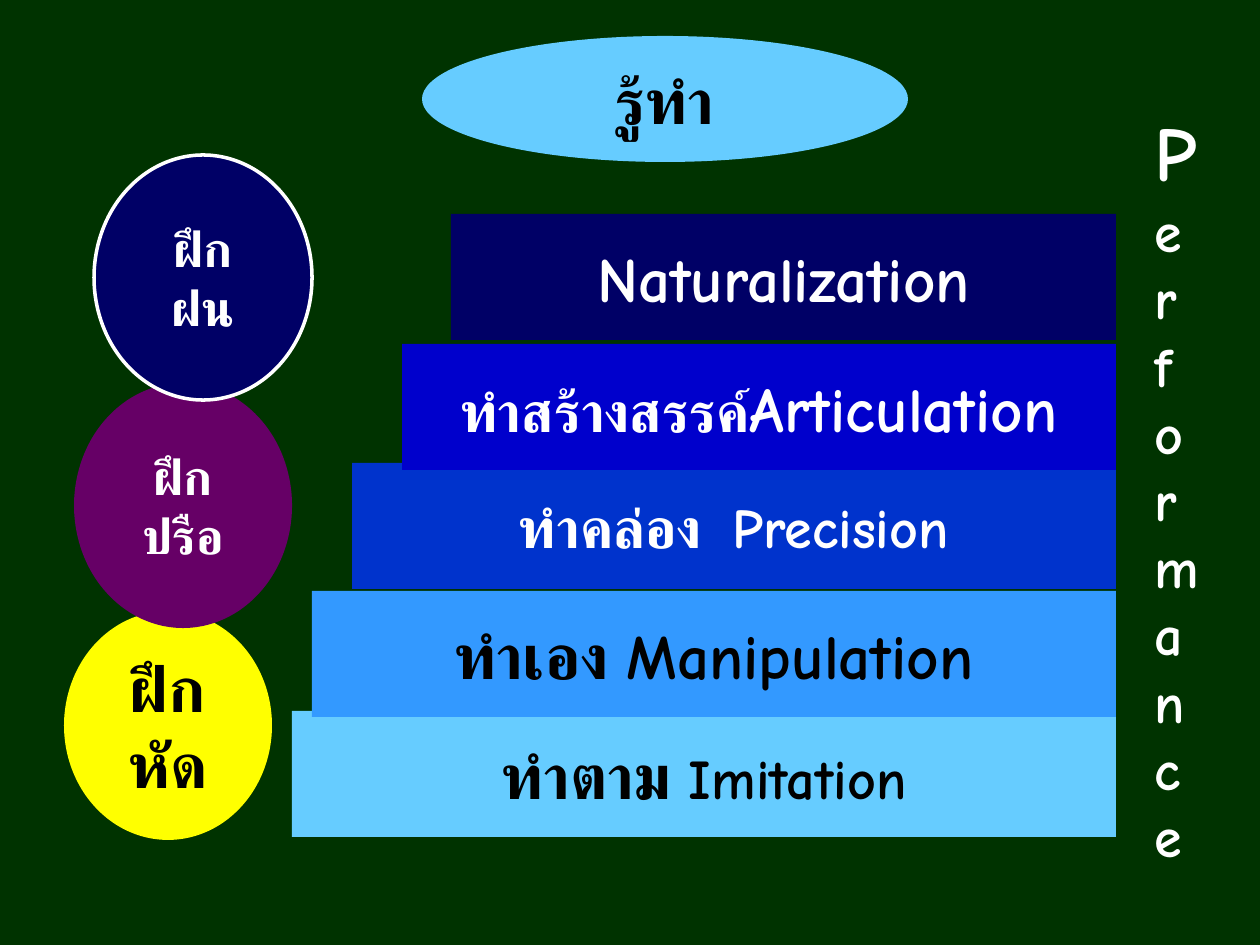
from pptx import Presentation
from pptx.dml.color import RGBColor
from pptx.enum.shapes import MSO_SHAPE as Kind
from pptx.enum.text import MSO_ANCHOR as Anchor, MSO_AUTO_SIZE as Fit, PP_ALIGN as Align
from pptx.util import Emu, Pt

PX = 914400 / 126
HEX = {
    "back": "003300", "sky": "66CCFF", "azure": "3399FF", "blue": "0033CC",
    "royal": "0000CC", "navy": "000066", "plum": "660066", "yellow": "FFFF00",
    "black": "000000", "white": "FFFFFF",
}
COMIC, LATO = "Comic Neue", "Lato"


def color(name):
    return RGBColor.from_string(HEX[name])


def place(box):
    return [Emu(round(n * PX)) for n in box]


def style(run, size, face, ink):
    font = run.font
    font.size, font.name, font.bold = Pt(size), face, True
    font.color.rgb = color(ink)


def add_form(slide, kind, box, fill, ink, lines, edge=None):
    """Each line is a list of (text, size, face) runs."""
    form = slide.shapes.add_shape(kind, *place(box))
    form.shadow.inherit = False
    form.fill.solid()
    form.fill.fore_color.rgb = color(fill)
    if edge:
        form.line.color.rgb = color(edge)
        form.line.width = Pt(2)
    else:
        form.line.fill.background()
    frame = form.text_frame
    frame.vertical_anchor = Anchor.MIDDLE
    frame.word_wrap = True
    frame.text = "\n".join("" for _ in lines)
    for para, line in zip(frame.paragraphs, lines):
        para.alignment = Align.CENTER
        for text, size, face in line:
            run = para.add_run()
            run.text = text
            style(run, size, face, ink)


def add_steps(slide, box):
    """Stack bars from the bottom up, all flush with the right edge of the box."""
    left, top, wide, _ = box
    steps = [
        (0, 497, "sky", "black", [("ทำตาม ", 36, COMIC), ("Imitation", 32, COMIC)]),
        (20, 377, "azure", "black", [("ทำเอง Manipulation", 36, COMIC)]),
        (60, 249, "blue", "white", [("ทำคล่อง  Precision", 32, COMIC)]),
        (110, 130, "royal", "white",
         [("ทำสร้างสรรค์", 32, LATO), ("Articulation", 36, COMIC)]),
        (159, 0, "navy", "white", [("Naturalization", 36, COMIC)]),
    ]
    for inset, drop, fill, ink, line in steps:
        bar = (left + inset, top + drop, wide - inset, 126)
        add_form(slide, Kind.RECTANGLE, bar, fill, ink, [line])


def add_word(slide, box, word):
    """Run the word down the slide, one letter to a line."""
    frame = slide.shapes.add_textbox(*place(box)).text_frame
    frame.word_wrap = False
    frame.auto_size = Fit.SHAPE_TO_FIT_TEXT
    frame.text = "\n".join(word)
    for i, para in enumerate(frame.paragraphs):
        style(para.runs[0], 32 if i else 44, COMIC, "white")


def add_title(slide, box):
    add_form(slide, Kind.OVAL, box, "sky", "black", [[("รู้ทำ", 36, LATO)]])


def add_stages(slide, box):
    """Overlap the three ovals, the top one in front."""
    left, top = box[:2]
    stages = [
        (0, 456, 208, 229, "yellow", "black", 36, "หัด", None),
        (10, 228, 218, 245, "plum", "white", 28, "ปรือ", None),
        (30, 0, 218, 245, "navy", "white", 28, "ฝน", "white"),
    ]
    for x, y, wide, high, fill, ink, size, end, edge in stages:
        lines = [[(text, size, LATO)] for text in ("ฝึก", end)]
        oval = (left + x, top + y, wide, high)
        add_form(slide, Kind.OVAL, oval, fill, ink, lines, edge)


def main():
    deck = Presentation()
    deck.slide_width, deck.slide_height = place((1260, 945))
    slide = deck.slides.add_slide(deck.slide_layouts[6])
    slide.background.fill.solid()
    slide.background.fill.fore_color.rgb = color("back")
    add_steps(slide, (292, 214, 824, 623))
    add_word(slide, (1142, 98, 69, 785), "Performance")
    add_title(slide, (422, 36, 486, 126))
    add_stages(slide, (64, 155, 248, 685))
    deck.save("out.pptx")


if __name__ == "__main__":
    main()
